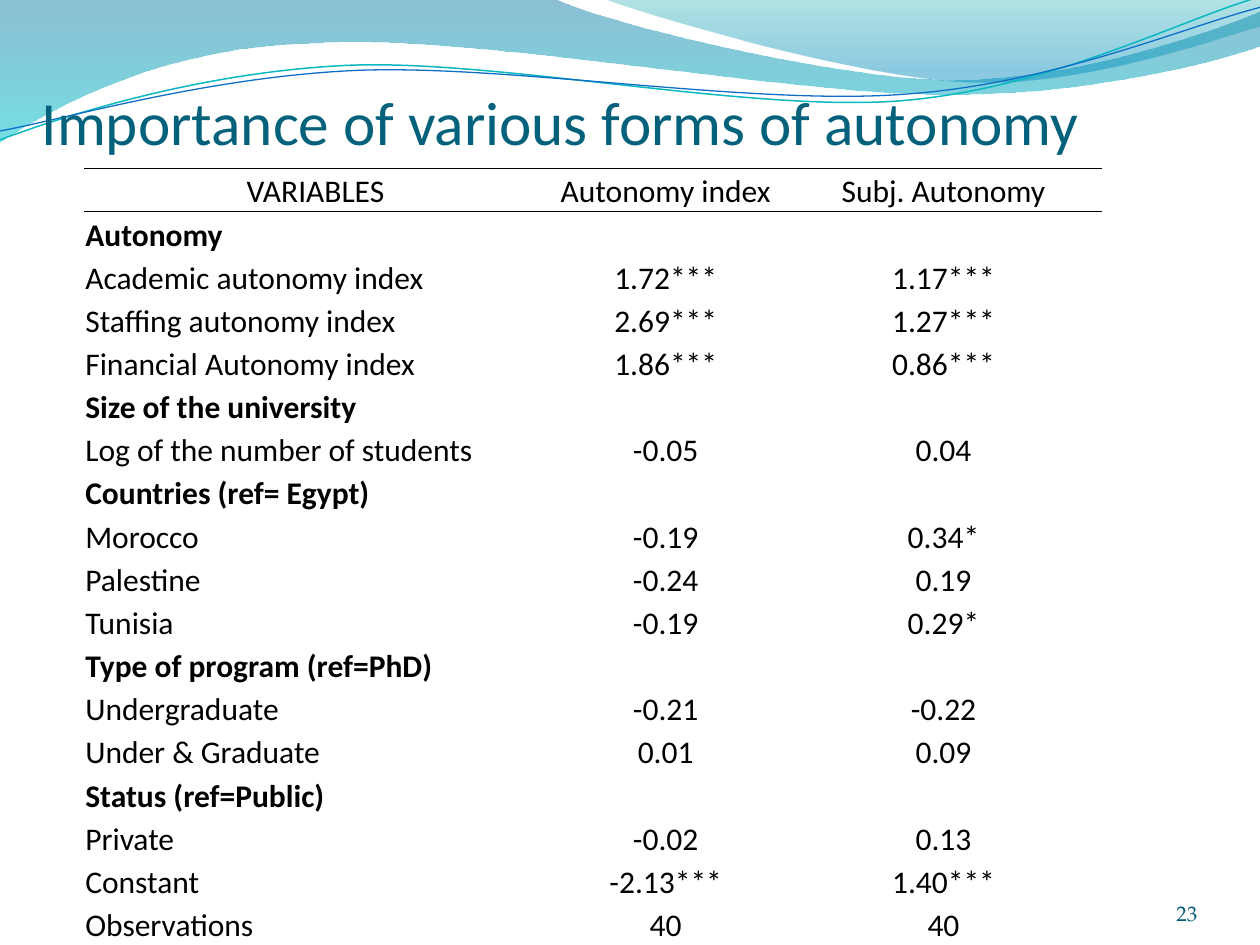
"""Build the slide with regression results on forms of university autonomy."""
from lxml import etree
from pptx import Presentation
from pptx.dml.color import RGBColor
from pptx.enum.text import MSO_ANCHOR, MSO_AUTO_SIZE, PP_ALIGN
from pptx.oxml.ns import qn
from pptx.util import Cm, Pt

BOTTOM = MSO_ANCHOR.BOTTOM
NO_FIT = MSO_AUTO_SIZE.NONE
LEFT, CENTER, RIGHT = PP_ALIGN.LEFT, PP_ALIGN.CENTER, PP_ALIGN.RIGHT
PLAIN_TABLE = "{2D5ABB26-0587-4C30-8999-92F81FD0307C}"


class Theme:
    font, number_font = "Calibri", "TeX Gyre Pagella"
    title, number, text = "04617B", "045D75", "000000"
    title_size, number_size, table_size = Pt(35), Pt(12), Pt(18)
    rule = Pt(0.5)
    wide_wave = ((0, "0074A1", 45), (1, "00C6CF", 55))
    small_wave = ((0, "00A1A9", 30), (0.8, "008BBF", 45))
    teal_line, blue_line = ("0AB8BF", Pt(0.85)), ("0F6FC6", Pt(0.75))


def set_text(tf, text, font, size, color, align=LEFT, bold=False):
    tf.text = text
    p = tf.paragraphs[0]
    p.alignment = align
    for r in p.runs:
        r.font.name, r.font.size, r.font.bold = font, size, bold
        r.font.color.rgb = RGBColor.from_string(color)


def add_wave(shapes, start, segments, close):
    """Draw one-point segments as lines and three-point segments as curves."""
    builder = shapes.build_freeform(Cm(start[0]), Cm(start[1]))
    builder.add_line_segments([(Cm(x), Cm(y)) for seg in segments for x, y in seg], close=close)
    sp = builder.convert_to_shape()
    sp.shadow.inherit = False
    steps = iter(list(sp._element.spPr.iter(qn("a:lnTo"))))
    for seg in segments:
        first, *others = [next(steps) for _ in seg]
        if others:
            first.tag = qn("a:cubicBezTo")
        for step in others:
            first.append(step[0])
            step.getparent().remove(step)
    return sp


prs = Presentation()
prs.slide_width, prs.slide_height = Cm(25.4), Cm(19.05)
s = prs.slides.add_slide(prs.slide_layouts[5])

filled_waves = (
    (Theme.wide_wave, (0, 0), (
        ((11.18, -0.03),),
        ((12.09, 0.43), (16.87, 1.6), (19.25, 1.6)),
        ((21.67, 1.6), (24.33, 0.66), (25.4, 0.23)),
        ((25.43, 0.91),),
        ((24.97, 1.12), (22.1, 1.93), (18.95, 1.9)),
        ((15.8, 1.9), (9.7, 0.71), (6.53, 0.86)),
        ((3.28, 0.91), (1.17, 2.11), (-0.03, 2.87)))),
    (Theme.small_wave, (12.17, -0.03), (
        ((12.93, 0.28), (17.32, 1.57), (19.53, 1.65)),
        ((21.74, 1.75), (24.41, 0.81), (25.4, 0.53)),
        ((25.4, 0),))),
)
for stops, start, segments in filled_waves:
    sp = add_wave(s.shapes, start, segments, True)
    sp.line.fill.background()
    sp.fill.gradient()
    sp.fill.gradient_angle = 270
    for stop, (pos, color, _) in zip(sp.fill.gradient_stops, stops):
        stop.position = pos
        stop.color.rgb = RGBColor.from_string(color)
    for clr, (_, _, opacity) in zip(sp._element.spPr.iter(qn("a:srgbClr")), stops):
        etree.SubElement(clr, qn("a:alpha"), val=str(opacity * 1000))

line_waves = (
    (Theme.teal_line, (-0.05, 2.22), (
        ((1.19, 1.82), (4.02, 1.04), (7.05, 1.05)),
        ((10.05, 1.07), (15.02, 2.37), (18.08, 2.29)),
        ((21.13, 2.2), (23.86, 0.91), (25.41, 0.55)))),
    (Theme.blue_line, (-0.04, 2.04), (
        ((1.16, 1.89), (4.17, 1.15), (7.2, 1.16)),
        ((10.25, 1.18), (15.13, 2.25), (18.19, 2.16)),
        ((21.22, 2.1), (23.93, 1.06), (25.45, 0.75)))),
)
for (color, width), start, segments in line_waves:
    sp = add_wave(s.shapes, start, segments, False)
    sp.rotation = 357.3
    sp.fill.background()
    sp.line.color.rgb = RGBColor.from_string(color)
    sp.line.width = width

title = s.shapes.title
title.left, title.top, title.width, title.height = Cm(0.84), Cm(0), Cm(22.86), Cm(3.18)
s.shapes._spTree.append(title._element)
set_text(title.text_frame, "Importance of various forms of autonomy",
         Theme.font, Theme.title_size, Theme.title)
number = s.shapes.add_textbox(Cm(22.02), Cm(17.65), Cm(2.12), Cm(1.02))
set_text(number.text_frame, "23", Theme.number_font, Theme.number_size, Theme.number, RIGHT)
for sp, top in ((title, Cm(0.13)), (number, 0)):
    tf = sp.text_frame
    tf.word_wrap, tf.auto_size, tf.vertical_anchor = True, NO_FIT, BOTTOM
    tf.margin_left = tf.margin_right = tf.margin_bottom = 0
    tf.margin_top = top

rows = (
    ("VARIABLES", "Autonomy index", "Subj. Autonomy"),
    ("Autonomy", "", ""),
    ("Academic autonomy index", "1.72***", "1.17***"),
    ("Staffing autonomy index", "2.69***", "1.27***"),
    ("Financial Autonomy index", "1.86***", "0.86***"),
    ("Size of the university", "", ""),
    ("Log of the number of students", "-0.05", "0.04"),
    ("Countries (ref= Egypt)", "", ""),
    ("Morocco", "-0.19", "0.34*"),
    ("Palestine", "-0.24", "0.19"),
    ("Tunisia", "-0.19", "0.29*"),
    ("Type of program (ref=PhD)", "", ""),
    ("Undergraduate", "-0.21", "-0.22"),
    ("Under & Graduate", "0.01", "0.09"),
    ("Status (ref=Public)", "", ""),
    ("Private", "-0.02", "0.13"),
    ("Constant", "-2.13***", "1.40***"),
    ("Observations", "40", "40"),
)
borders = {0: ("a:lnT", "a:lnB"), 1: ("a:lnT",), len(rows) - 1: ("a:lnB",)}
col_widths = (9.32, 4.8, 6.4)
row_height = 0.87

table = s.shapes.add_table(len(rows), len(col_widths), Cm(1.7), Cm(3.39),
                           Cm(sum(col_widths)), Cm(row_height * len(rows))).table
table.first_row = table.horz_banding = False
table._tbl.tblPr.find(qn("a:tableStyleId")).text = PLAIN_TABLE
for col, width in zip(table.columns, col_widths):
    col.width = Cm(width)

for i, row in enumerate(rows):
    table.rows[i].height = Cm(row_height)
    for j, text in enumerate(row):
        cell = table.cell(i, j)
        cell.margin_left = cell.margin_right = cell.margin_top = Cm(0.02)
        cell.margin_bottom = 0
        cell.vertical_anchor = BOTTOM
        cell.fill.background()
        set_text(cell.text_frame, text, Theme.font, Theme.table_size, Theme.text,
                 CENTER if i == 0 or j > 0 else LEFT, bold=not row[1])
        for k, tag in enumerate(("a:lnL", "a:lnR", "a:lnT", "a:lnB")):
            ln = etree.Element(qn(tag), w=str(Theme.rule))
            if tag in borders.get(i, ()):
                fill = etree.SubElement(ln, qn("a:solidFill"))
                etree.SubElement(fill, qn("a:srgbClr"), val=Theme.text)
            else:
                etree.SubElement(ln, qn("a:noFill"))
            cell._tc.get_or_add_tcPr().insert(k, ln)

prs.save("out.pptx")
